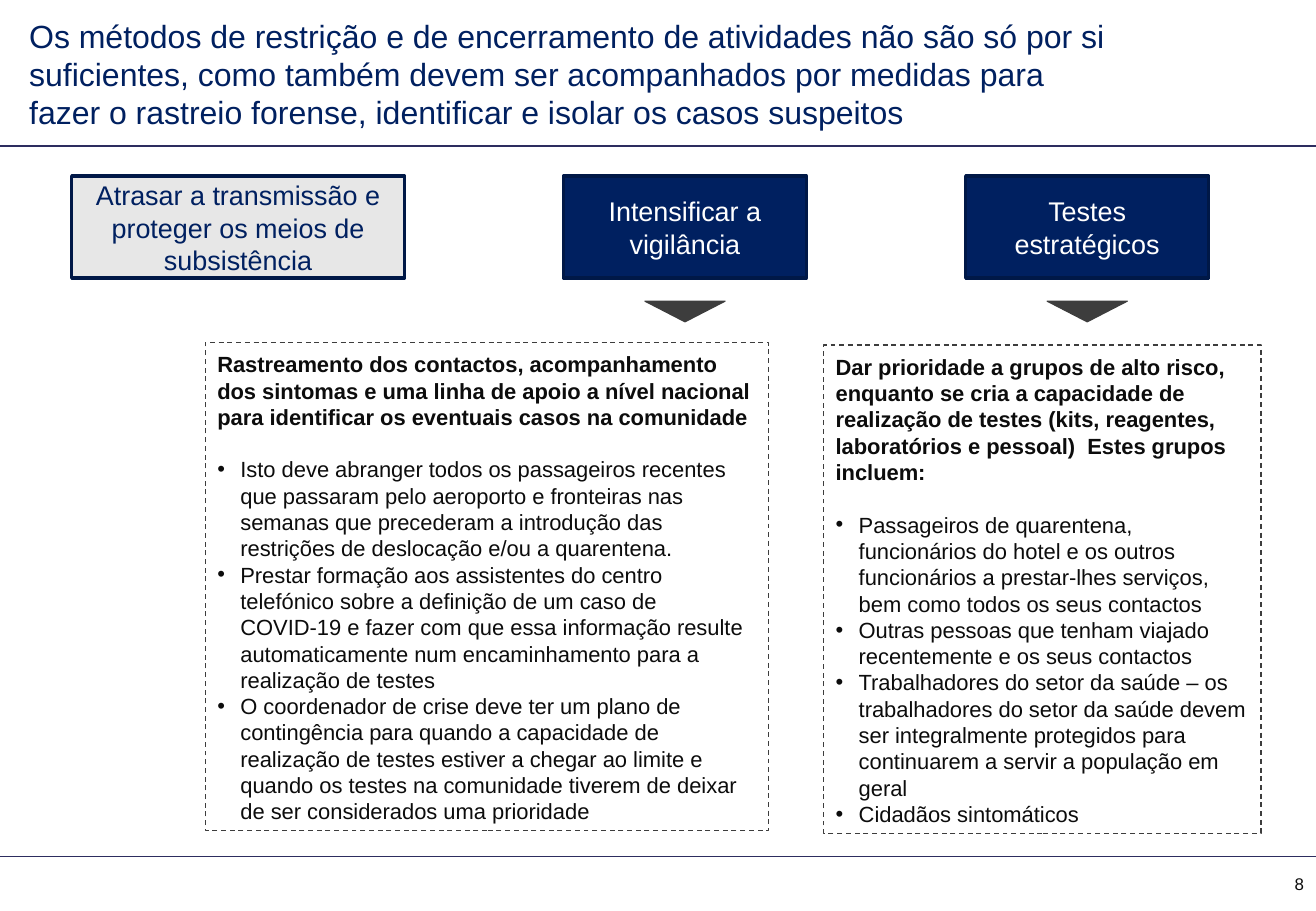
from lxml import etree
from pptx import Presentation
from pptx.dml.color import RGBColor
from pptx.enum.dml import MSO_LINE
from pptx.enum.shapes import MSO_CONNECTOR, MSO_SHAPE
from pptx.enum.text import MSO_ANCHOR, PP_ALIGN
from pptx.oxml.ns import qn
from pptx.util import Pt

COLORS = {"navy": "002060", "border": "001847", "rule": "2D2D5F", "gray": "E7E7E7",
          "dark": "3D3D3D", "text": "0C0C0C", "white": "FFFFFF"}
WIDTH, HEIGHT = 780, 540
HEADER_TOP, HEADER_HEIGHT = 104.4, 60.5
ARROW_TOP, ARROW_WIDTH, ARROW_HEIGHT = 178.5, 47.5, 12.25
BODY_PITCH = 15.6

TITLE = ("Os métodos de restrição e de encerramento de atividades não são só por si "
         "suficientes, como também devem ser acompanhados por medidas para fazer o "
         "rastreio forense, identificar e isolar os casos suspeitos")
DELAY = "Atrasar a transmissão e proteger os meios de subsistência"
# header text, header left, detail box (left, top, width, height), lead, bullets
COLUMNS = [
    ("Intensificar a vigilância", 334, (121.7, 203, 334, 289.4),
     "Rastreamento dos contactos, acompanhamento dos sintomas e uma linha de apoio a "
     "nível nacional para identificar os eventuais casos na comunidade",
     ["Isto deve abranger todos os passageiros recentes que passaram pelo aeroporto e "
      "fronteiras nas semanas que precederam a introdução das restrições de deslocação "
      "e/ou a quarentena.",
      "Prestar formação aos assistentes do centro telefónico sobre a definição de um caso "
      "de COVID-19 e fazer com que essa informação resulte automaticamente num "
      "encaminhamento para a realização de testes",
      "O coordenador de crise deve ter um plano de contingência para quando a capacidade "
      "de realização de testes estiver a chegar ao limite e quando os testes na comunidade "
      "tiverem de deixar de ser considerados uma prioridade"]),
    ("Testes estratégicos", 572.4, (488.2, 204.5, 259.2, 289.4),
     "Dar prioridade a grupos de alto risco, enquanto se cria a capacidade de realização "
     "de testes (kits, reagentes, laboratórios e pessoal)  Estes grupos incluem:",
     ["Passageiros de quarentena, funcionários do hotel e os outros funcionários a "
      "prestar-lhes serviços, bem como todos os seus contactos",
      "Outras pessoas que tenham viajado recentemente e os seus contactos",
      "Trabalhadores do setor da saúde – os trabalhadores do setor da saúde devem ser "
      "integralmente protegidos para continuarem a servir a população em geral",
      "Cidadãos sintomáticos"]),
]


def color(name):
    return RGBColor.from_string(COLORS[name])


def write(para, text, size, tint, pitch, align=PP_ALIGN.LEFT, bold=False):
    para.alignment = align
    para.line_spacing = Pt(pitch)
    para.space_before = para.space_after = Pt(0)
    span = para.add_run()
    span.text = text
    span.font.name, span.font.size, span.font.bold = "Arial", Pt(size), bold
    span.font.color.rgb = color(tint)


def prepare_frame(shape, anchor, top_inset=3.6):
    frame = shape.text_frame
    frame.word_wrap = True
    frame.vertical_anchor = anchor
    frame.margin_left = frame.margin_right = Pt(7.2)
    frame.margin_top, frame.margin_bottom = Pt(top_inset), Pt(3.6)
    return frame


def add_bullet(para):
    props = para._p.get_or_add_pPr()
    props.set("marL", str(Pt(13.7)))
    props.set("indent", str(-Pt(13.7)))
    etree.SubElement(props, qn("a:buFont")).set("typeface", "Arial")
    etree.SubElement(props, qn("a:buChar")).set("char", "•")


def add_block(page, kind, box, fill, line, weight):
    shape = page.shapes.add_shape(kind, *map(Pt, box))
    shape.shadow.inherit = False
    if fill:
        shape.fill.solid()
        shape.fill.fore_color.rgb = color(fill)
    else:
        shape.fill.background()
    shape.line.color.rgb = color(line)
    shape.line.width = Pt(weight)
    return shape


def add_rule(page, top):
    rule = page.shapes.add_connector(MSO_CONNECTOR.STRAIGHT, 0, Pt(top), Pt(WIDTH), Pt(top))
    rule.line.color.rgb = color("rule")
    rule.line.width = Pt(1)
    etree.SubElement(rule._element.spPr, qn("a:effectLst"))


def add_title(page, box):
    title = page.shapes.title
    title.left, title.top, title.width, title.height = map(Pt, box)
    frame = prepare_frame(title, MSO_ANCHOR.TOP)
    write(frame.paragraphs[0], TITLE, 19, "navy", 22.5)


def add_page_number(page, box):
    number = page.shapes.add_textbox(*map(Pt, box))
    frame = prepare_frame(number, MSO_ANCHOR.MIDDLE)
    write(frame.paragraphs[0], "8", 10, "text", 12, PP_ALIGN.RIGHT)


def add_header(page, text, left, width, fill, tint):
    box = (left, HEADER_TOP, width, HEADER_HEIGHT)
    header = add_block(page, MSO_SHAPE.RECTANGLE, box, fill, "border", 2)
    frame = prepare_frame(header, MSO_ANCHOR.MIDDLE)
    write(frame.paragraphs[0], text, 16, tint, 19.3, PP_ALIGN.CENTER)


def add_details(page, box, lead, bullets):
    panel = add_block(page, MSO_SHAPE.RECTANGLE, box, None, "dark", 0.75)
    panel.line.dash_style = MSO_LINE.DASH
    frame = prepare_frame(panel, MSO_ANCHOR.TOP, 5)
    para = frame.paragraphs[0]
    write(para, lead, 13, "text", BODY_PITCH, bold=True)
    para.space_after = Pt(BODY_PITCH)
    for text in bullets:
        para = frame.add_paragraph()
        add_bullet(para)
        write(para, text, 13, "text", BODY_PITCH)


def add_column(page, heading, left, box, lead, bullets):
    """Place a header, the arrow centred below it and its detail panel."""
    width = 144
    add_header(page, heading, left, width, "navy", "white")
    arrow_box = (left + (width - ARROW_WIDTH) / 2, ARROW_TOP, ARROW_WIDTH, ARROW_HEIGHT)
    arrow = add_block(page, MSO_SHAPE.ISOSCELES_TRIANGLE, arrow_box, "dark", "dark", 0.75)
    arrow.rotation = 180
    add_details(page, box, lead, bullets)


def main():
    deck = Presentation()
    deck.slide_width, deck.slide_height = Pt(WIDTH), Pt(HEIGHT)
    page = deck.slides.add_slide(deck.slide_layouts[5])
    for top in (86.4, 507.6):
        add_rule(page, top)
    add_title(page, (10.1, 6.5, 655.2, 76.3))
    add_header(page, DELAY, 42.5, 197.3, "gray", "navy")
    for column in COLUMNS:
        add_column(page, *column)
    add_page_number(page, (747, 508.3, 33, 31))
    deck.save("out.pptx")


if __name__ == "__main__":
    main()
